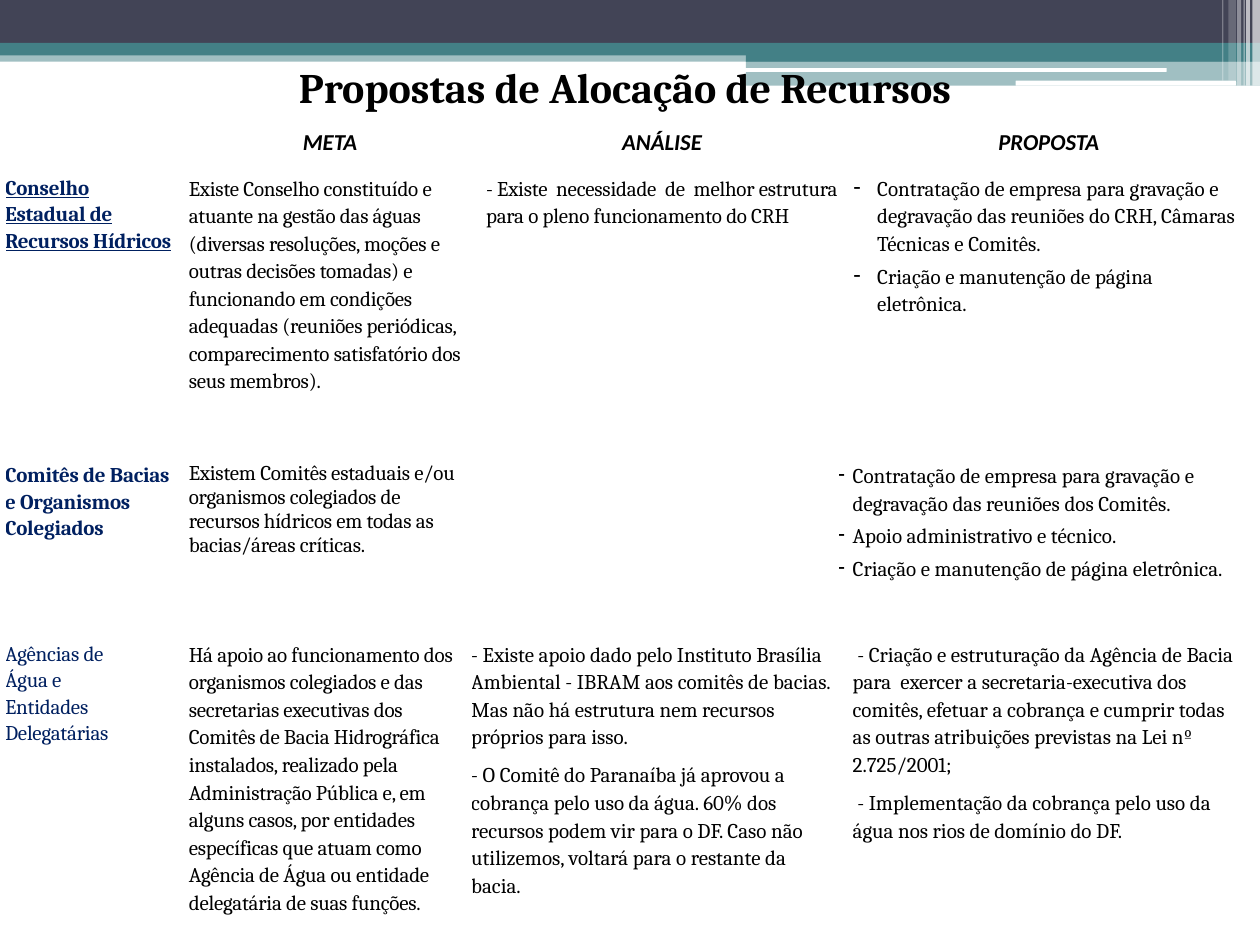
from dataclasses import dataclass, field
from typing import Any

from lxml import etree
from pptx import Presentation
from pptx.dml import color
from pptx.enum import shapes, text
from pptx.oxml import ns
from pptx.util import Pt


@dataclass(frozen=True)
class Theme:
    """Colours, fonts and type sizes of the slide."""
    dark: str = "424456"
    teal: str = "438086"
    white: str = "FFFFFF"
    black: str = "000000"
    navy: str = "002060"
    body_font: str = "Cambria"
    header_font: str = "Calibri"
    title_size: float = 24
    header_size: float = 13
    body_size: float = 12


THEME = Theme()


@dataclass(frozen=True)
class Bar:
    """One decorative bar, measured in points."""
    left: float
    top: float
    width: float
    height: float
    fill: str
    opacity: int = 100
    rounded: bool = False


@dataclass(frozen=True)
class CellStyle:
    """Paragraph and font format of a table cell."""
    font: dict[str, Any] = field(default_factory=dict)
    colour: str = THEME.black
    line_spacing: float = 1.14
    space_after: float = 0
    margin: float = 8.5
    indent: float = 0
    bullet: str = ""
    tracking: int = 0
    alignment: Any = text.PP_ALIGN.LEFT


@dataclass(frozen=True)
class Entry:
    """Paragraphs of a table cell with their style."""
    style: CellStyle
    paragraphs: tuple[str, ...] = ()


BARS = [
    Bar(0, 28.8, 720, 6.5, THEME.teal, 50),
    Bar(0, 0, 720, 24.5, THEME.dark),
    Bar(0, 24.5, 720, 7.2, THEME.teal),
    Bar(426.2, 28.1, 293.8, 7.2, THEME.teal),
    Bar(426.2, 34.6, 293.8, 14.4, THEME.teal, 50),
    Bar(425.5, 38.9, 241.2, 2.2, THEME.white, rounded=True),
    Bar(580.3, 46.1, 126, 2.9, THEME.white, rounded=True),
    Bar(715.7, 0, 4.3, 49, THEME.white, 65),
    Bar(712.1, 0, 2.2, 49, THEME.white, 65),
    Bar(710.6, 0, 0.7, 49, THEME.white, 60),
    Bar(707, 0, 2.2, 49, THEME.white, 40),
    Bar(702, 0, 4.3, 46.1, THEME.white, 20),
    Bar(698.4, 0, 0.7, 46.1, THEME.white, 30),
]

BODY = {"name": THEME.body_font, "size": Pt(THEME.body_size)}
HEADER = CellStyle({"name": THEME.header_font, "size": Pt(THEME.header_size), "bold": True, "italic": True},
                   alignment=text.PP_ALIGN.CENTER)
TOPIC = CellStyle(BODY, THEME.navy, 1.1, margin=0, tracking=-10)
BOLD_TOPIC = CellStyle(BODY | {"bold": True}, THEME.navy, 1.1, margin=0, tracking=-10)
LINED_TOPIC = CellStyle(BODY | {"bold": True, "underline": True}, THEME.navy, 1.1, margin=0, tracking=-10)
GOAL = CellStyle(BODY, tracking=-10)
TIGHT_GOAL = CellStyle(BODY, line_spacing=1, tracking=-10)
ANALYSIS = CellStyle(BODY, space_after=6, margin=0)
PROPOSAL = CellStyle(BODY, space_after=6)
WIDE_LIST = CellStyle(BODY, space_after=3, margin=22.5, indent=-13.5, bullet="-")
HANGING_LIST = CellStyle(BODY, space_after=3, indent=-8.5, bullet="-")

COLUMN_WIDTHS = [96.5, 169.9, 209.5, 232.6]
ROW_HEIGHTS = [28.1, 164.2, 102.2, 169.9]
ROWS = [
    [Entry(HEADER), Entry(HEADER, ("META",)), Entry(HEADER, ("ANÁLISE",)), Entry(HEADER, ("PROPOSTA",))],
    [
        Entry(LINED_TOPIC, ("Conselho Estadual de Recursos Hídricos",)),
        Entry(GOAL, ("Existe Conselho constituído e atuante na gestão das águas (diversas resoluções, moções e "
                     "outras decisões tomadas) e funcionando em condições adequadas (reuniões periódicas, "
                     "comparecimento satisfatório dos seus membros).",)),
        Entry(GOAL, ("- Existe  necessidade  de  melhor estrutura para o pleno funcionamento do CRH",)),
        Entry(WIDE_LIST, ("Contratação de empresa para gravação e degravação das reuniões do CRH, "
                          "Câmaras Técnicas e Comitês.",
                          "Criação e manutenção de página eletrônica.")),
    ],
    [
        Entry(BOLD_TOPIC, ("Comitês de Bacias e Organismos Colegiados",)),
        Entry(TIGHT_GOAL, ("Existem Comitês estaduais e/ou organismos colegiados de recursos hídricos "
                           "em todas as bacias/áreas críticas.",)),
        Entry(GOAL),
        Entry(HANGING_LIST, ("Contratação de empresa para gravação e degravação das reuniões dos Comitês.",
                             "Apoio administrativo e técnico.",
                             "Criação e manutenção de página eletrônica.")),
    ],
    [
        Entry(TOPIC, ("Agências de", "Água e", "Entidades Delegatárias")),
        Entry(GOAL, ("Há apoio ao funcionamento dos organismos colegiados e das secretarias executivas dos "
                     "Comitês de Bacia Hidrográfica instalados, realizado pela Administração Pública e, em "
                     "alguns casos, por entidades específicas que atuam como Agência de Água ou entidade "
                     "delegatária de suas funções.",)),
        Entry(ANALYSIS, ("- Existe apoio dado pelo Instituto Brasília Ambiental - IBRAM aos comitês de bacias. "
                         "Mas não há estrutura nem recursos próprios para isso.",
                         "- O Comitê do Paranaíba já aprovou a cobrança pelo uso da água. 60% dos recursos podem "
                         "vir para o DF. Caso não utilizemos, voltará para o restante da bacia.")),
        Entry(PROPOSAL, (" - Criação e estruturação da Agência de Bacia para  exercer a secretaria-executiva dos "
                         "comitês, efetuar a cobrança e cumprir todas as outras atribuições previstas na "
                         "Lei nº 2.725/2001;",
                         " - Implementação da cobrança pelo uso da água nos rios de domínio do DF.")),
    ],
]


def apply_format(target: Any, values: dict[str, Any]) -> None:
    """Set each named attribute of the target."""
    for name, value in values.items():
        setattr(target, name, value)


def draw_bar(slide: Any, bar: Bar) -> None:
    """Draw a flat bar with its opacity."""
    kind = shapes.MSO_SHAPE.ROUNDED_RECTANGLE if bar.rounded else shapes.MSO_SHAPE.RECTANGLE
    shape = slide.shapes.add_shape(kind, Pt(bar.left), Pt(bar.top), Pt(bar.width), Pt(bar.height))
    shape.shadow.inherit = False
    shape.line.fill.background()
    shape.fill.solid()
    shape.fill.fore_color.rgb = color.RGBColor.from_string(bar.fill)
    if bar.opacity < 100:
        swatch = shape.element.find(".//" + ns.qn("a:srgbClr"))
        etree.SubElement(swatch, ns.qn("a:alpha"), val=str(bar.opacity * 1000))


def write_paragraph(paragraph: Any, content: str, style: CellStyle) -> None:
    """Write one paragraph in the given style."""
    apply_format(paragraph, {"alignment": style.alignment, "line_spacing": style.line_spacing,
                             "space_after": Pt(style.space_after)})
    properties = paragraph._p.get_or_add_pPr()
    properties.set("marL", str(Pt(style.margin)))
    properties.set("indent", str(Pt(style.indent)))
    if style.bullet:
        etree.SubElement(properties, ns.qn("a:buChar"), char=style.bullet)
    run = paragraph.add_run()
    run.text = content
    apply_format(run.font, style.font)
    run.font.color.rgb = color.RGBColor.from_string(style.colour)
    run._r.get_or_add_rPr().set("spc", str(style.tracking))


def draw_borders(cell: Any, widths: dict[str, float]) -> None:
    """Give the cell white borders of the given widths."""
    properties = cell._tc.get_or_add_tcPr()
    for position, (side, width) in enumerate(widths.items()):
        line = etree.Element(ns.qn(f"a:ln{side}"), w=str(Pt(width)))
        fill = etree.SubElement(line, ns.qn("a:solidFill"))
        etree.SubElement(fill, ns.qn("a:srgbClr"), val=THEME.white)
        properties.insert(position, line)


def draw_table(slide: Any) -> None:
    """Draw the table of goals, analyses and proposals."""
    table = slide.shapes.add_table(len(ROWS), len(COLUMN_WIDTHS), Pt(2.9), Pt(71.3),
                                   Pt(sum(COLUMN_WIDTHS)), Pt(sum(ROW_HEIGHTS))).table
    apply_format(table, {"first_row": False, "horz_banding": False})
    for column, width in zip(table.columns, COLUMN_WIDTHS):
        column.width = Pt(width)
    for index, (row, height, entries) in enumerate(zip(table.rows, ROW_HEIGHTS, ROWS)):
        row.height = Pt(height)
        for cell, entry in zip(row.cells, entries):
            apply_format(cell, dict.fromkeys(("margin_left", "margin_top", "margin_right", "margin_bottom"), 0))
            cell.fill.background()
            draw_borders(cell, {"L": 1, "R": 1, "T": 3 if index in (1, 3) else 1, "B": 3 if index in (0, 2) else 1})
            for number, content in enumerate(entry.paragraphs):
                frame = cell.text_frame
                paragraph = frame.add_paragraph() if number else frame.paragraphs[0]
                write_paragraph(paragraph, content, entry.style)


def format_title(slide: Any) -> None:
    """Place the title in front of the bars."""
    title = slide.shapes.title
    apply_format(title, {"left": Pt(31), "top": Pt(31.7), "width": Pt(652.3), "height": Pt(36)})
    title.text_frame.text = "Propostas de Alocação de Recursos"
    apply_format(title.text_frame, {"word_wrap": True, "auto_size": text.MSO_AUTO_SIZE.SHAPE_TO_FIT_TEXT,
                                    "vertical_anchor": text.MSO_ANCHOR.TOP})
    paragraph = title.text_frame.paragraphs[0]
    paragraph.alignment = text.PP_ALIGN.CENTER
    font = paragraph.runs[0].font
    apply_format(font, {"name": THEME.body_font, "size": Pt(THEME.title_size), "bold": True})
    font.color.rgb = color.RGBColor.from_string(THEME.black)
    title.element.getparent().append(title.element)


def main() -> None:
    """Build and save the presentation."""
    presentation = Presentation()
    apply_format(presentation, {"slide_width": Pt(720), "slide_height": Pt(540)})
    slide = presentation.slides.add_slide(presentation.slide_layouts.get_by_name("Title Only"))
    for bar in BARS:
        draw_bar(slide, bar)
    draw_table(slide)
    format_title(slide)
    presentation.save("out.pptx")


if __name__ == "__main__":
    main()
